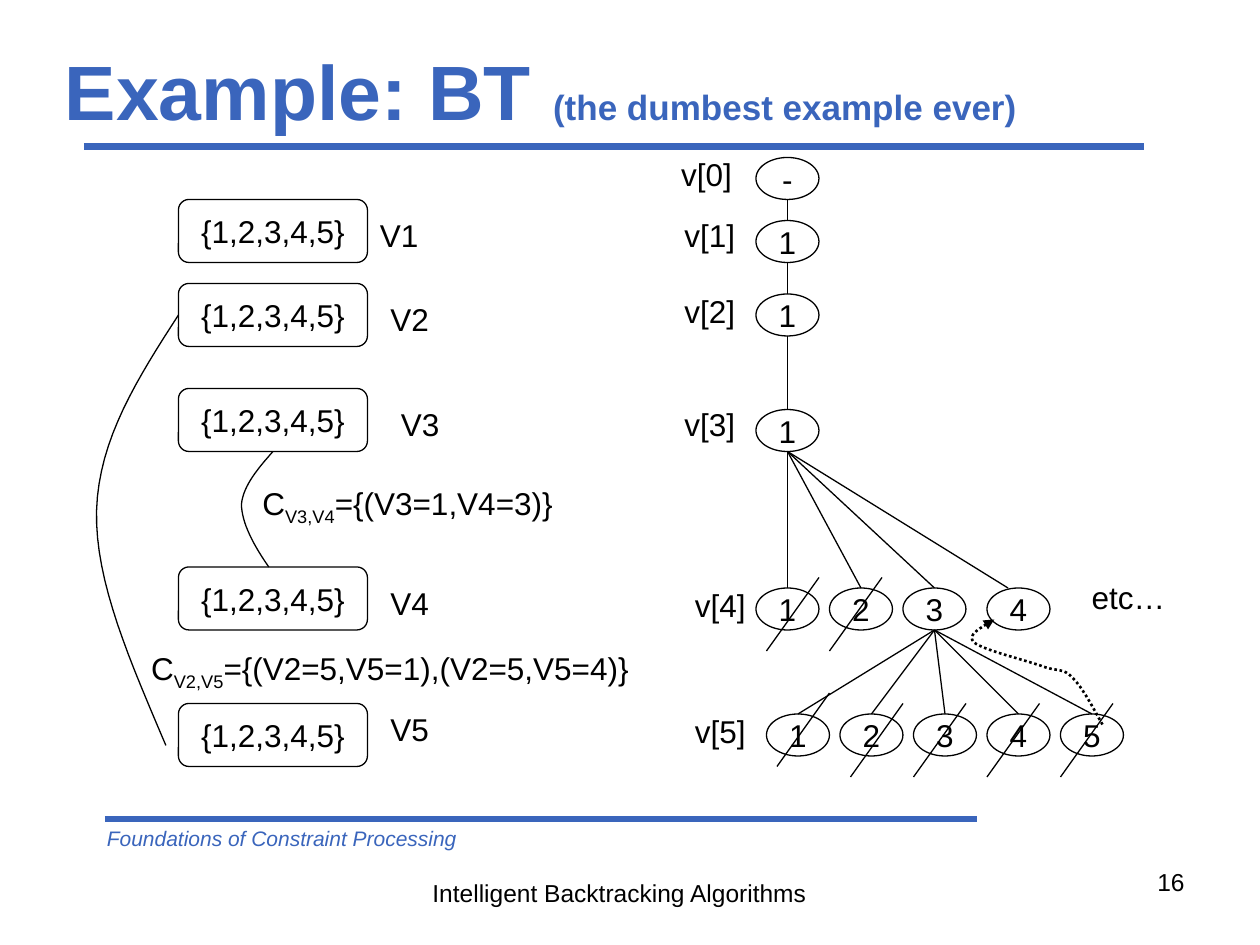
from dataclasses import dataclass
from lxml.etree import SubElement
from pptx import Presentation
from pptx.dml.color import RGBColor
from pptx.enum.dml import MSO_LINE
from pptx.enum.shapes import MSO_CONNECTOR, MSO_SHAPE
from pptx.enum.text import MSO_ANCHOR, PP_ALIGN
from pptx.oxml.ns import qn
from pptx.util import Inches, Pt

COLS, ROWS = 120, 90


@dataclass(frozen=True)
class Theme:
    font: str = "Arial"
    blue: RGBColor = RGBColor(0x3A, 0x65, 0xBC)
    black: RGBColor = RGBColor(0, 0, 0)
    title: float = 44
    subtitle: float = 20
    body: float = 18
    page: float = 14
    footer: float = 12
    thin: float = 0.75
    dotted: float = 1.5
    rule: float = 4


THEME = Theme()


@dataclass(frozen=True)
class Box:
    left: float
    top: float
    width: float
    height: float

    def point(self, x, y):
        return Inches((self.left + x) * 10 / COLS), Inches((self.top + y) * 7.5 / ROWS)

    def area(self, x, y, w, h):
        x1, y1 = self.point(x, y)
        x2, y2 = self.point(x + w, y + h)
        return x1, y1, x2 - x1, y2 - y1


def apply(obj, values):
    for name, value in values.items():
        setattr(obj, name, value)


def write(tf, runs, align=PP_ALIGN.LEFT, anchor=MSO_ANCHOR.TOP, wrap=False):
    apply(tf, {"word_wrap": wrap, "vertical_anchor": anchor})
    p = tf.paragraphs[0]
    p.alignment = align
    for text, fmt in runs:
        r = p.add_run()
        r.text = text
        fmt = {"name": THEME.font, "size": Pt(THEME.body), "color": THEME.black, **fmt}
        r.font.color.rgb = fmt.pop("color")
        baseline = fmt.pop("baseline", None)
        if baseline:
            r._r.get_or_add_rPr().set("baseline", baseline)
        apply(r.font, fmt)


def add_text(s, area, runs, **layout):
    write(s.shapes.add_textbox(*area).text_frame, runs, **layout)


def add_node(s, kind, area, text):
    sp = s.shapes.add_shape(kind, *area)
    sp.shadow.inherit = False
    sp.fill.background()
    sp.line.color.rgb = THEME.black
    sp.line.width = Pt(THEME.thin)
    write(sp.text_frame, [(text, {})], PP_ALIGN.CENTER, MSO_ANCHOR.MIDDLE)


def add_line(s, start, end, color=THEME.black, width=THEME.thin):
    line = s.shapes.add_connector(MSO_CONNECTOR.STRAIGHT, *start, *end)
    line.line.color.rgb = color
    line.line.width = Pt(width)
    SubElement(line._element.spPr, qn("a:effectLst"))


def bezier(points, steps=16):
    for i in range(0, len(points) - 1, 3):
        a, b, c, d = points[i:i + 4]
        for k in range(1, steps + 1):
            t = k / steps
            u = 1 - t
            yield tuple(u**3 * a[j] + 3 * u * u * t * b[j] + 3 * u * t * t * c[j] + t**3 * d[j]
                        for j in (0, 1))


def add_curve(s, box, points, width=THEME.thin):
    builder = s.shapes.build_freeform(*box.point(*points[0]))
    builder.add_line_segments([box.point(*pt) for pt in bezier(points)], close=False)
    sp = builder.convert_to_shape()
    sp.shadow.inherit = False
    sp.fill.background()
    sp.line.color.rgb = THEME.black
    sp.line.width = Pt(width)
    return sp


def title_region(s, box):
    bold = {"color": THEME.blue, "bold": True}
    add_text(s, box.area(0, 0, box.width, 9),
             [("Example: BT ", {**bold, "size": Pt(THEME.title)}),
              ("(the dumbest example ever)", {**bold, "size": Pt(THEME.subtitle)})],
             anchor=MSO_ANCHOR.MIDDLE, wrap=True)
    add_line(s, box.point(3, 10), box.point(104, 10), THEME.blue, THEME.rule)


def footer_region(s, box):
    page = {"size": Pt(THEME.page)}
    add_line(s, box.point(1, 0), box.point(84, 0), THEME.blue, THEME.rule)
    add_text(s, box.area(0, 0, 63, 3.6),
             [("Foundations of Constraint Processing",
               {"size": Pt(THEME.footer), "color": THEME.blue, "italic": True})], wrap=True)
    add_text(s, box.area(31, 5, 38.3, 4), [("Intelligent Backtracking Algorithms", page)])
    add_text(s, box.area(77, 4, 28, 6.2), [("16", page)], align=PP_ALIGN.RIGHT, wrap=True)


def constraint_region(s, box):
    variables = [(0, 26, 1), (8, 27, 9), (18, 28, 19), (35, 27, 36), (48, 27, 48)]
    for i, (row, label_col, label_row) in enumerate(variables, 1):
        add_node(s, MSO_SHAPE.FLOWCHART_ALTERNATE_PROCESS, box.area(8, row, 18, 6), "{1,2,3,4,5}")
        add_text(s, box.area(label_col, label_row, 6.1, 4.8), [(f"V{i}", {})])
    add_curve(s, box, [(17, 24), (15.6, 25.6), (14.2, 27.2), (14, 29),
                       (14, 30.8), (15.2, 33), (16.6, 35)])
    add_curve(s, box, [(8, 11), (4.2, 16.9), (0.4, 22.8), (0.2, 29.6),
                       (0, 36.4), (3.5, 44.2), (6.8, 52)])
    constraints = [(14.8, 26.5, 30.7, "V3,V4", "={(V3=1,V4=3)}"),
                   (4.2, 42.2, 48.6, "V2,V5", "={(V2=5,V5=1),(V2=5,V5=4)}")]
    for col, row, width, scope, pairs in constraints:
        add_text(s, box.area(col, row, width, 4.8),
                 [("C", {}), (scope, {"baseline": "-25000"}), (pairs, {})])


def tree_region(s, box):
    levels = [(1, [9]), (7, [9]), (14, [9]), (25, [9]),
              (42, [9, 16, 23, 31]), (54, [10, 17, 24, 31, 38])]
    labels = [(0.7, 0.2), (1, 6), (1, 13.2), (1, 24), (2, 41.2), (2, 53.2)]
    for i, ((row, cols), (x, y)) in enumerate(zip(levels, labels)):
        add_text(s, box.area(x, y, 7.2, 4.8), [(f"v[{i}]", {})])
        for value, col in enumerate(cols, 1):
            add_node(s, MSO_SHAPE.OVAL, box.area(col, row, 6, 4), str(value) if i else "-")

    parents = [9, 9, 9, 9, 23]
    for parent, (row, _), (next_row, cols) in zip(parents, levels, levels[1:]):
        for col in cols:
            end = col + (2 if (col, next_row) == (31, 42) else 3)
            add_line(s, box.point(parent + 3, row + 4), box.point(end, next_row))

    jump = add_curve(s, box, [(42, 55), (41, 53.2), (40.1, 51.5), (39.2, 50.6),
                              (38.3, 49.6), (37.9, 50), (36.4, 49.5),
                              (34.8, 48.9), (30.6, 47.9), (29.8, 47.2),
                              (29, 46.5), (30.4, 45.8), (31.7, 45)], THEME.dotted)
    jump.line.dash_style = MSO_LINE.ROUND_DOT
    SubElement(jump.line._get_or_add_ln(), qn("a:tailEnd")).set("type", "triangle")
    add_text(s, box.area(39.8, 40.5, 9.4, 4.8), [("etc…", {})])

    strikes = [(41, [15, 21]), (52, [16]), (53, [23, 29, 36, 43])]
    for row, cols in strikes:
        for col in cols:
            add_line(s, box.point(col, row), box.point(col - 5, row + 7))


def main():
    prs = Presentation()
    apply(prs, {"slide_width": Inches(10), "slide_height": Inches(7.5)})
    s = prs.slides.add_slide(prs.slide_layouts[6])
    title_region(s, Box(5, 4, 108, 10))
    footer_region(s, Box(9, 78, 105, 11))
    constraint_region(s, Box(9, 19, 54, 54))
    tree_region(s, Box(63, 14, 51, 60))
    prs.save("out.pptx")


if __name__ == "__main__":
    main()
